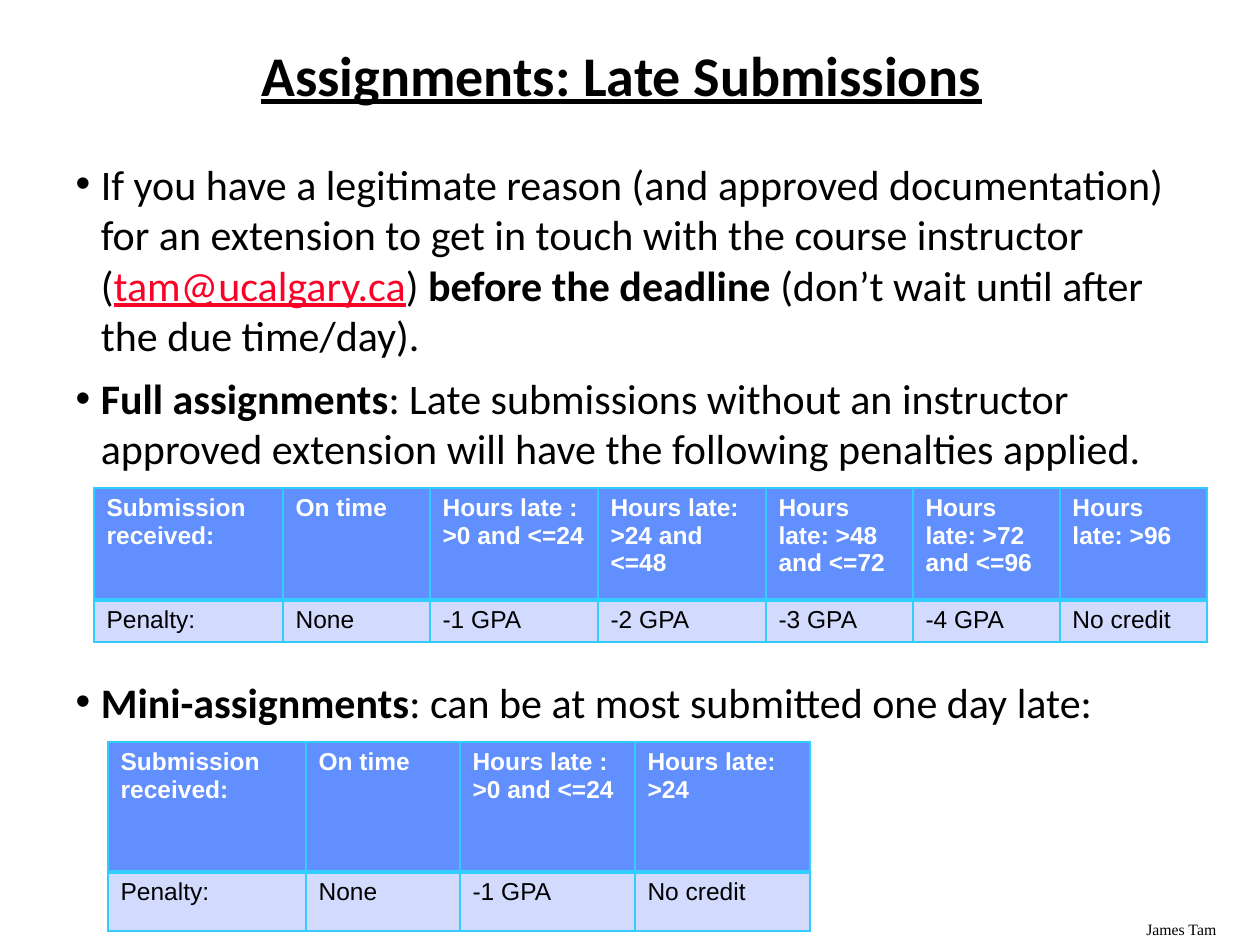
from dataclasses import dataclass

import pptx
import pptx.dml.color
import pptx.enum.text
import pptx.oxml
import pptx.oxml.ns
import pptx.util

EMU_PER_PX = 914400 / 126
COLORS = {
    "text": "000000",
    "email": "FC0128",
    "header": "618FFD",
    "header_text": "FFFFFF",
    "body": "D2DBFE",
    "border": "33CCFF",
}


@dataclass
class Run:
    text: str
    bold: bool = False
    underline: bool = False
    color: str = "text"


@dataclass
class Bullet:
    runs: list[Run]
    space_before: float = 7.2


@dataclass
class PenaltyTable:
    left: int
    top: int
    column_widths: list[int]
    row_heights: list[int]
    rows: list[list[str]]


BULLETS = [
    Bullet([
        Run("If you have a legitimate reason (and approved documentation) for an "
            "extension to get in touch with the course instructor ("),
        Run("tam@ucalgary.ca", underline=True, color="email"),
        Run(") "),
        Run("before the deadline ", bold=True),
        Run("(don’t wait until after the due time/day)."),
    ]),
    Bullet([
        Run("Full assignments", bold=True),
        Run(": Late submissions without an instructor approved extension will have "
            "the following penalties applied."),
    ]),
    # The large gap leaves room for the first table.
    Bullet([
        Run("Mini-assignments", bold=True),
        Run(": can be at most submitted one day late:"),
    ], space_before=116),
]

TABLES = [
    PenaltyTable(94, 488, [189, 147, 168, 168, 147, 147, 147], [112, 40], [
        ["Submission received:", "On time", "Hours late : >0 and <=24",
         "Hours late: >24 and <=48", "Hours late: >48 and <=72",
         "Hours late: >72 and <=96", "Hours late: >96"],
        ["Penalty:", "None", "-1 GPA", "-2 GPA", "-3 GPA", "-4 GPA", "No credit"],
    ]),
    PenaltyTable(108, 742, [198, 154, 175, 175], [130, 59], [
        ["Submission received:", "On time", "Hours late : >0 and <=24", "Hours late: >24"],
        ["Penalty:", "None", "-1 GPA", "No credit"],
    ]),
]


def px(length: int) -> pptx.util.Emu:
    return pptx.util.Emu(round(length * EMU_PER_PX))


def rgb(name: str) -> pptx.dml.color.RGBColor:
    return pptx.dml.color.RGBColor.from_string(COLORS[name])


def place(shape, left: int, top: int, width: int, height: int) -> None:
    shape.left, shape.top, shape.width, shape.height = map(px, (left, top, width, height))


def set_font(font, name: str, size: int, color: str = "text", bold: bool = False) -> None:
    font.name, font.size, font.bold = name, pptx.util.Pt(size), bold
    font.color.rgb = rgb(color)


def add_title(slide) -> None:
    title = slide.shapes.title
    place(title, 59, 42, 1125, 72)
    title.text_frame.text = "Assignments: Late Submissions"
    title.text_frame.auto_size = pptx.enum.text.MSO_AUTO_SIZE.NONE
    paragraph = title.text_frame.paragraphs[0]
    paragraph.alignment = pptx.enum.text.PP_ALIGN.CENTER
    paragraph.line_spacing = 0.9
    set_font(paragraph.font, "Calibri", 32, bold=True)
    paragraph.font.underline = True


def add_bullets(slide, bullets: list[Bullet]) -> None:
    body = slide.placeholders[1]
    place(body, 63, 152, 1126, 740)
    frame = body.text_frame
    frame.auto_size = pptx.enum.text.MSO_AUTO_SIZE.NONE
    indent = pptx.util.Inches(0.2)
    for index, bullet in enumerate(bullets):
        paragraph = frame.add_paragraph() if index else frame.paragraphs[0]
        paragraph.space_before = pptx.util.Pt(bullet.space_before)
        properties = paragraph._p.get_or_add_pPr()
        properties.set("marL", str(indent))
        properties.set("indent", str(-indent))
        set_font(paragraph.font, "Calibri", 24)
        for part in bullet.runs:
            run = paragraph.add_run()
            run.text = part.text
            run.font.bold = part.bold
            run.font.underline = part.underline
            run.font.color.rgb = rgb(part.color)


def set_borders(cell, thick_side: str) -> None:
    """Draw 1 pt borders, with 3 pt on the side between header and body."""
    properties = cell._tc.get_or_add_tcPr()
    for side in "LRTB":
        width = pptx.util.Pt(3 if side == thick_side else 1)
        properties.append(pptx.oxml.parse_xml(
            f'<a:ln{side} {pptx.oxml.ns.nsdecls("a")} w="{width}"><a:solidFill>'
            f'<a:srgbClr val="{COLORS["border"]}"/></a:solidFill></a:ln{side}>'))


def add_penalty_table(slide, spec_table: PenaltyTable) -> None:
    widths, heights = spec_table.column_widths, spec_table.row_heights
    table = slide.shapes.add_table(
        len(heights), len(widths), px(spec_table.left), px(spec_table.top),
        px(sum(widths)), px(sum(heights))).table
    for column, width in zip(table.columns, widths):
        column.width = px(width)
    for row_index, (row, height) in enumerate(zip(table.rows, heights)):
        row.height = px(height)
        is_header = row_index == 0
        for cell, text in zip(row.cells, spec_table.rows[row_index]):
            cell.text = text
            set_borders(cell, "B" if is_header else "T")
            cell.fill.solid()
            cell.fill.fore_color.rgb = rgb("header" if is_header else "body")
            set_font(cell.text_frame.paragraphs[0].font, "Arial", 14,
                     "header_text" if is_header else "text", is_header)


def add_author(slide) -> None:
    box = slide.shapes.add_textbox(px(1134), px(914), px(126), px(31))
    box.text_frame.word_wrap = True
    box.text_frame.text = "James Tam"
    set_font(box.text_frame.paragraphs[0].font, "Times New Roman", 9)


def main() -> None:
    presentation = pptx.Presentation()
    presentation.slide_width, presentation.slide_height = px(1260), px(945)
    slide = presentation.slides.add_slide(presentation.slide_layouts[1])
    add_author(slide)
    add_title(slide)
    add_bullets(slide, BULLETS)
    for table in TABLES:
        add_penalty_table(slide, table)
    presentation.save("out.pptx")


if __name__ == "__main__":
    main()
